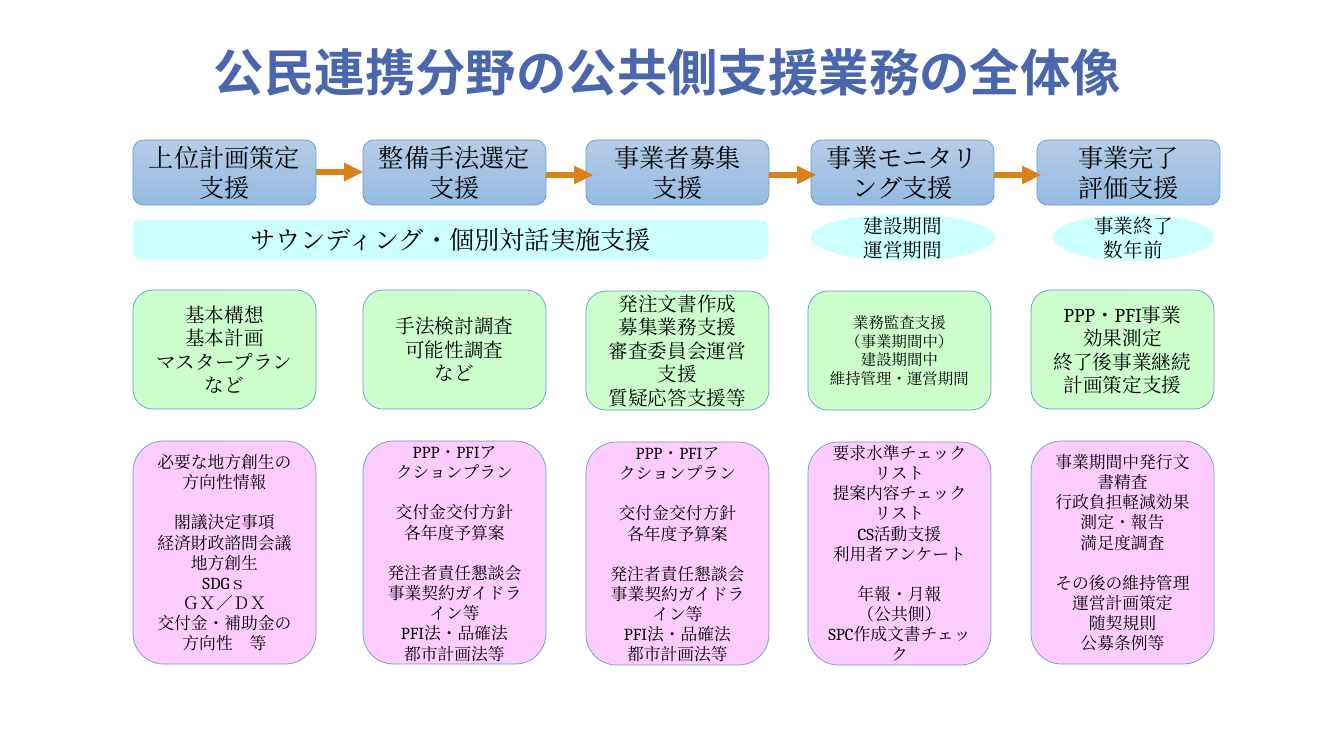
from dataclasses import dataclass
from typing import Optional

from lxml import etree
from pptx import Presentation
from pptx import util as u
from pptx.dml.color import RGBColor
from pptx.enum import shapes, text
from pptx.oxml.ns import qn

EMU_PER_INCH = 914400
PX_PER_INCH = 100.8
BODY_FONT, TITLE_FONT = "Cambria", "Noto Sans CJK JP"
BLACK, TITLE_BLUE, OUTLINE, ORANGE = "000000", "4A66AC", "629DD1", "DC801A"
HEADER_TOP_COLOUR, HEADER_BOTTOM_COLOUR = "B4CCE7", "96BAE1"
CYAN, GREEN, PINK = "CCFFFF", "CCFFCC", "FFCCFF"
ROUNDED = shapes.MSO_SHAPE.ROUNDED_RECTANGLE
ELLIPSE = shapes.MSO_SHAPE.OVAL

STAGE_WIDTH = 183
HEADER_TOP, HEADER_HEIGHT = 140, 65
TASK_HEIGHT, REFERENCE_HEIGHT = 119, 223
ARROW_LENGTH = 47
GROUP_GAP = 14.4


def px(length: int) -> int:
    return round(length * EMU_PER_INCH / PX_PER_INCH)


def rgb(colour: str) -> RGBColor:
    return RGBColor.from_string(colour)


@dataclass
class Box:
    left: int
    top: int
    width: int
    height: int
    wording: str  # one paragraph a line, groups parted by an empty line
    size: int
    fill: str
    fill_end: Optional[str] = None
    outline: Optional[str] = None
    kind: shapes.MSO_SHAPE = ROUNDED


@dataclass
class Stage:
    header_left: int
    detail_left: int
    task_top: int
    reference_top: int
    header: str
    tasks: str
    references: str
    task_size: int = 14
    arrow_y: Optional[int] = 175

    def boxes(self) -> list[Box]:
        return [
            Box(self.header_left, HEADER_TOP, STAGE_WIDTH, HEADER_HEIGHT, self.header, 18,
                HEADER_TOP_COLOUR, HEADER_BOTTOM_COLOUR, OUTLINE),
            Box(self.detail_left, self.task_top, STAGE_WIDTH, TASK_HEIGHT, self.tasks,
                self.task_size, GREEN, outline=OUTLINE),
            Box(self.detail_left, self.reference_top, STAGE_WIDTH, REFERENCE_HEIGHT,
                self.references, 12, PINK, outline=OUTLINE),
        ]


PROCUREMENT_REFERENCES = (
    "PPP・PFIア\nクションプラン\n\n交付金交付方針\n各年度予算案\n\n"
    "発注者責任懇談会\n事業契約ガイドライン等\nPFI法・品確法\n都市計画法等"
)

STAGES = [
    Stage(133, 133, 290, 441, "上位計画策定\n支援",
          "基本構想\n基本計画\nマスタープラン\nなど",
          "必要な地方創生の方向性情報\n\n閣議決定事項\n経済財政諮問会議\n地方創生\n"
          "SDGｓ\nＧＸ／ＤＸ\n交付金・補助金の\n方向性　等", arrow_y=172),
    Stage(363, 363, 290, 441, "整備手法選定支援",
          "手法検討調査\n可能性調査\nなど", PROCUREMENT_REFERENCES),
    Stage(586, 586, 291, 442, "事業者募集\n支援",
          "発注文書作成\n募集業務支援\n審査委員会運営支援\n質疑応答支援等",
          PROCUREMENT_REFERENCES),
    Stage(811, 808, 291, 442, "事業モニタリング支援",
          "業務監査支援\n（事業期間中）\n建設期間中\n維持管理・運営期間",
          "要求水準チェックリスト\n提案内容チェックリスト\nCS活動支援\n利用者アンケート\n\n"
          "年報・月報\n（公共側）\nSPC作成文書チェック", task_size=11),
    Stage(1037, 1031, 290, 441, "事業完了\n評価支援",
          "PPP・PFI事業\n効果測定\n終了後事業継続計画策定支援",
          "事業期間中発行文書精査\n行政負担軽減効果測定・報告\n満足度調査\n\n"
          "その後の維持管理運営計画策定\n随契規則\n公募条例等", arrow_y=None),
]

SUPPORT_NOTES = [
    Box(133, 220, 635, 39, "サウンディング・個別対話実施支援", 18, CYAN),
    Box(811, 214, 184, 47, "建設期間\n運営期間", 14, CYAN, kind=ELLIPSE),
    Box(1053, 214, 161, 47, "事業終了\n数年前", 14, CYAN, kind=ELLIPSE),
]


def add_run(paragraph, wording: str, size: int, font_name: str, colour: str,
            bold: bool = False) -> None:
    run = paragraph.add_run()
    run.text = wording
    font = run.font
    font.size, font.name, font.bold = u.Pt(size), font_name, bold
    font.color.rgb = rgb(colour)
    # Japanese glyphs take the same typeface
    etree.SubElement(run._r.get_or_add_rPr(), qn("a:ea")).set("typeface", font_name)


def add_wording(frame, wording: str, size: int) -> None:
    paragraph = None
    for group_number, group in enumerate(wording.split("\n\n")):
        for line_number, line in enumerate(group.split("\n")):
            paragraph = frame.paragraphs[0] if paragraph is None else frame.add_paragraph()
            paragraph.alignment = text.PP_ALIGN.CENTER
            if group_number and not line_number:
                paragraph.space_before = u.Pt(GROUP_GAP)
            add_run(paragraph, line, size, BODY_FONT, BLACK)


def add_box(slide, box: Box) -> None:
    shape = slide.shapes.add_shape(
        box.kind, px(box.left), px(box.top), px(box.width), px(box.height))
    shape.shadow.inherit = False
    if box.fill_end:
        shape.fill.gradient()
        shape.fill.gradient_angle = 270
        for stop, colour in zip(shape.fill.gradient_stops, (box.fill, box.fill_end)):
            stop.color.rgb = rgb(colour)
    else:
        shape.fill.solid()
        shape.fill.fore_color.rgb = rgb(box.fill)
    if box.outline:
        shape.line.color.rgb = rgb(box.outline)
        shape.line.width = u.Pt(0.5)
    else:
        shape.line.fill.background()
    frame = shape.text_frame
    frame.word_wrap = True
    frame.vertical_anchor = text.MSO_ANCHOR.MIDDLE
    add_wording(frame, box.wording, box.size)


def add_arrow(slide, left: int, y: int) -> None:
    arrow = slide.shapes.add_connector(
        shapes.MSO_CONNECTOR.STRAIGHT, px(left), px(y), px(left + ARROW_LENGTH), px(y))
    arrow.line.color.rgb = rgb(ORANGE)
    arrow.line.width = u.Pt(4.5)
    etree.SubElement(arrow.line._get_or_add_ln(), qn("a:tailEnd")).set("type", "triangle")
    etree.SubElement(arrow._element.spPr, qn("a:effectLst"))


def add_title(slide, wording: str) -> None:
    title = slide.shapes.add_textbox(px(204), px(40), px(958), px(66))
    frame = title.text_frame
    frame.word_wrap = True
    frame.vertical_anchor = text.MSO_ANCHOR.BOTTOM
    paragraph = frame.paragraphs[0]
    paragraph.line_spacing = 0.8
    add_run(paragraph, wording, 36, TITLE_FONT, TITLE_BLUE, bold=True)


def main() -> None:
    deck = Presentation()
    deck.slide_width, deck.slide_height = px(1344), px(756)
    slide = deck.slides.add_slide(deck.slide_layouts[6])

    add_title(slide, "公民連携分野の公共側支援業務の全体像")

    # Five stages and the support that runs alongside them
    for stage in STAGES:
        for box in stage.boxes():
            add_box(slide, box)
    for note in SUPPORT_NOTES:
        add_box(slide, note)

    # Flow from each stage to the next
    for stage in STAGES:
        if stage.arrow_y is not None:
            add_arrow(slide, stage.header_left + STAGE_WIDTH, stage.arrow_y)

    deck.save("out.pptx")


if __name__ == "__main__":
    main()
